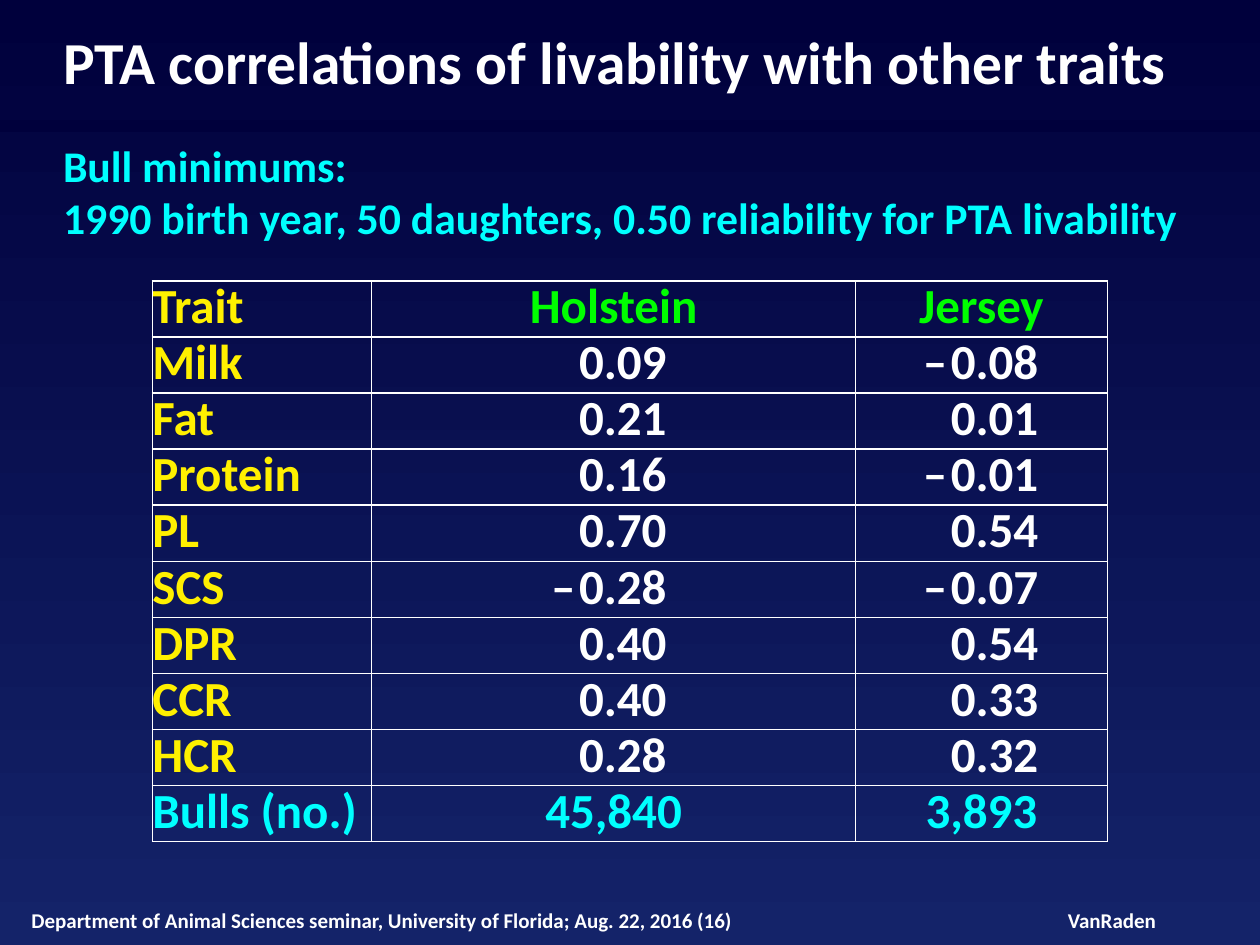
from pptx import Presentation, util as u
from pptx.dml.color import RGBColor
from pptx.enum import shapes, text
from pptx.oxml import parse_xml
from pptx.oxml.ns import nsdecls

WIDE, HIGH = u.Inches(10), u.Inches(7.5)
HUE = {"navy": "00003C", "blue": "142369", "white": "FFFFFF",
       "cyan": "00FFFF", "yellow": "FFF000", "green": "00FF00"}
LEFT, MID, RIGHT = text.PP_ALIGN.LEFT, text.PP_ALIGN.CENTER, text.PP_ALIGN.RIGHT
HEAD = ("Trait", "Holstein", "Jersey")
BODY = [("Milk", "0.09", "–0.08"), ("Fat", "0.21", "0.01"),
        ("Protein", "0.16", "–0.01"), ("PL", "0.70", "0.54"),
        ("SCS", "–0.28", "–0.07"), ("DPR", "0.40", "0.54"),
        ("CCR", "0.40", "0.33"), ("HCR", "0.28", "0.32")]
FOOT = ("Bulls (no.)", "45,840", "3,893")
COLS = (1.74, 3.84, 2)
PADS = (0, 1.5, 0.55)


def rgb(name):
    """Return the named colour."""
    return RGBColor.from_string(HUE[name])


def write(para, words, size=28, hue="white", align=LEFT, lead=None, gap=None):
    """Fill a paragraph, tracking out a leading minus sign."""
    para.alignment, para.line_spacing, para.space_before = align, lead, gap
    parts = ["–", words[1:]] if words.startswith("–") else [words]
    for part in parts:
        run = para.add_run()
        run.text = part
        font = run.font
        font.name, font.size, font.bold = "Calibri", u.Pt(size), True
        font.color.rgb = rgb(hue)
        if part == "–":
            run._r.get_or_add_rPr().set("spc", "200")


def place(shape, box):
    """Set a shape to the given left, top, width and height in inches."""
    shape.left, shape.top, shape.width, shape.height = map(u.Inches, box)


def clear(frame, anchor, wrap=True):
    """Remove margins and set the frame's anchor and wrapping."""
    frame.margin_left = frame.margin_right = 0
    frame.margin_top = frame.margin_bottom = 0
    frame.vertical_anchor, frame.word_wrap = anchor, wrap
    frame.auto_size = text.MSO_AUTO_SIZE.SHAPE_TO_FIT_TEXT


def back(slide):
    """Paint the gradient and the rule below the heading."""
    fill = slide.background.fill
    fill.gradient()
    fill.gradient_angle = 270
    for stop, hue, spot in zip(fill.gradient_stops, ("navy", "blue"), (0, 1)):
        stop.color.rgb, stop.position = rgb(hue), spot
    rule = slide.shapes.add_connector(
        shapes.MSO_CONNECTOR.STRAIGHT, 0, u.Inches(1), WIDE, u.Inches(1))
    rule.line.color.rgb, rule.line.width = rgb("navy"), u.Pt(6.5)
    rule._element.spPr.append(parse_xml("<a:effectLst %s/>" % nsdecls("a")))


def title(slide, box):
    """Write the heading and the bull minimums."""
    shape = slide.shapes.title
    place(shape, box)
    frame = shape.text_frame
    clear(frame, text.MSO_ANCHOR.TOP)
    write(frame.paragraphs[0], "PTA correlations of livability with other traits", 34)
    write(frame.add_paragraph(), "Bull minimums:", 25, "cyan", gap=u.Pt(24))
    write(frame.add_paragraph(),
          "1990 birth year, 50 daughters, 0.50 reliability for PTA livability",
          25, "cyan", gap=u.Pt(0))


def note(slide, box, words, align=LEFT, wrap=True):
    """Write one footer label."""
    shape = slide.shapes.add_textbox(0, 0, 0, 0)
    place(shape, box)
    clear(shape.text_frame, text.MSO_ANCHOR.MIDDLE, wrap)
    write(shape.text_frame.paragraphs[0], words, 12, align=align)


def grid(slide, box):
    """Lay out the correlations by trait and breed."""
    rows = [HEAD, *BODY, FOOT]
    table = slide.shapes.add_table(
        len(rows), len(COLS), *map(u.Inches, box)).table
    table.first_row = table.horz_banding = False
    for col, wide in zip(table.columns, COLS):
        col.width = u.Inches(wide)
    for r, row in enumerate(rows):
        top, last = r == 0, r == len(rows) - 1
        for c, words in enumerate(row):
            cell = table.cell(r, c)
            cell.fill.background()
            cell.margin_left = cell.margin_top = cell.margin_bottom = 0
            edge = top or last
            cell.margin_right = 0 if edge else u.Inches(PADS[c])
            align = LEFT if c == 0 else MID if edge else RIGHT
            plain = "yellow" if c == 0 else "green" if top else "white"
            write(cell.text_frame.paragraphs[0], words, lead=u.Pt(32),
                  hue="cyan" if last else plain, align=align)


def main():
    """Build and save the slide."""
    deck = Presentation()
    deck.slide_width, deck.slide_height = WIDE, HIGH
    slide = deck.slides.add_slide(deck.slide_layouts[5])
    back(slide)
    note(slide, (8.47, 7.2, 0.71, 0.2), "VanRaden", MID, False)
    note(slide, (0.25, 7.2, 6.17, 0.2),
         "Department of Animal Sciences seminar, University of Florida; Aug. 22, 2016 (16)")
    title(slide, (0.5, 0.2, 9, 1.75))
    grid(slide, (1.21, 2.23, sum(COLS), 4.44))
    deck.save("out.pptx")


if __name__ == "__main__":
    main()
